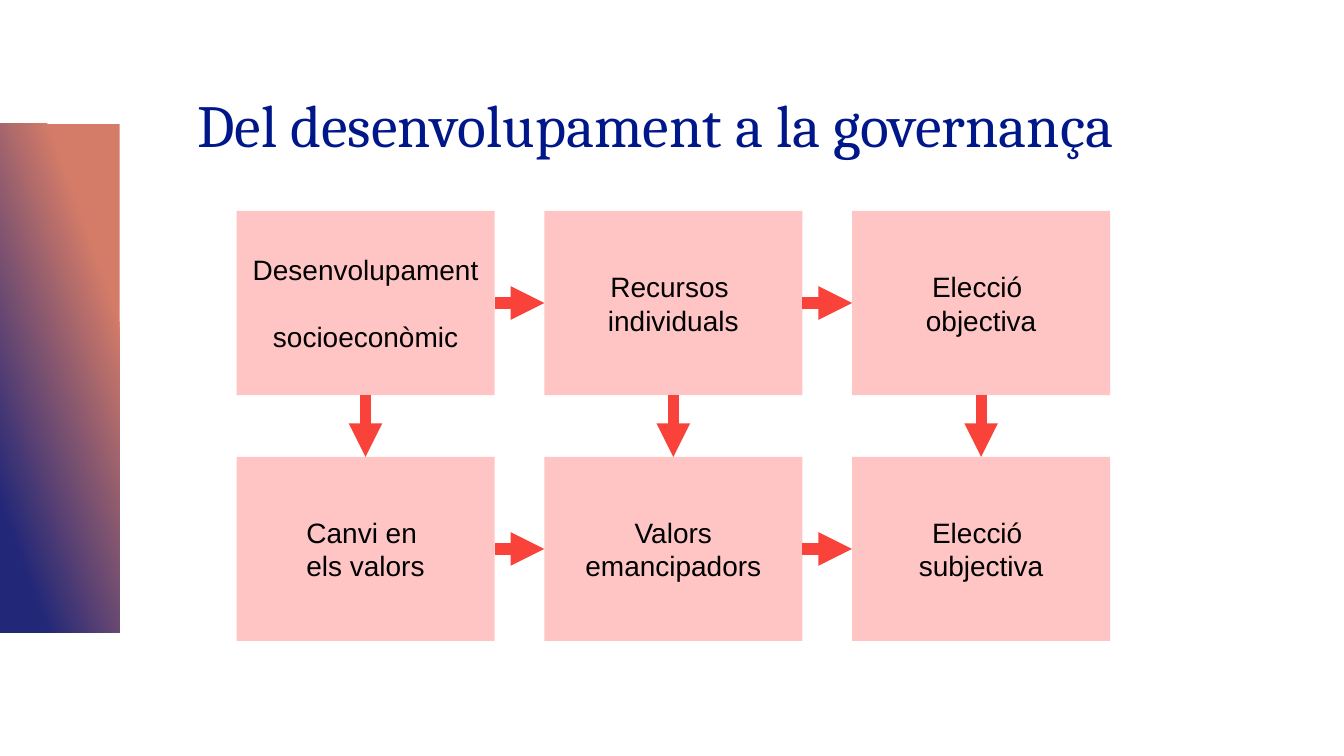
import copy

import pptx
import pptx.dml.color
import pptx.enum.shapes
import pptx.enum.text
import pptx.oxml
import pptx.oxml.ns
import pptx.util
from pptx.util import Inches

RGBColor = pptx.dml.color.RGBColor
Anchor = pptx.enum.text.MSO_ANCHOR
Align = pptx.enum.text.PP_ALIGN

NAVY = RGBColor(0x00, 0x17, 0x89)
PINK = RGBColor(0xFF, 0xC5, 0xC5)
RED = RGBColor(0xF9, 0x42, 0x3A)
BLACK = RGBColor(0x00, 0x00, 0x00)
TERRACOTTA = RGBColor(0xD4, 0x7C, 0x68)
INDIGO = RGBColor(0x22, 0x27, 0x78)

BOX_WIDTH, BOX_HEIGHT = 1.92, 1.37
COLUMNS = [1.76 + 2.29 * i for i in range(3)]
ROWS = [1.57, 3.4]
# A tuple holds paragraphs; a line feed inside one is a line break.
STAGES = [
    [("Desenvolupament \nsocioeconòmic",), ("Recursos ", "individuals"), ("Elecció ", "objectiva")],
    [("Canvi en ", "els valors"), ("Valors", "emancipadors"), ("Elecció ", "subjectiva")],
]


def write_text(frame, paragraphs, *, font, size, color, align=Align.LEFT,
               anchor=Anchor.MIDDLE, line_spacing=None):
    frame.word_wrap = True
    frame.vertical_anchor = anchor
    for i, text in enumerate(paragraphs):
        paragraph = frame.paragraphs[0] if i == 0 else frame.add_paragraph()
        paragraph.text = text
        paragraph.alignment = align
        paragraph.line_spacing = line_spacing
        for run in paragraph.runs:
            run.font.name = font
            run.font.size = pptx.util.Pt(size)
            run.font.color.rgb = color
        # A line break takes the height of the text around it.
        for line_break in paragraph._p.findall(pptx.oxml.ns.qn("a:br")):
            line_break.insert(0, copy.deepcopy(paragraph.runs[0]._r.rPr))


class FlowSlide:
    def __init__(self, slide):
        self.shapes = slide.shapes
        self.box_style = dict(font="Arial", size=15, color=BLACK, align=Align.CENTER)
        self.title_style = dict(font="Cambria", size=32, color=NAVY,
                                anchor=Anchor.BOTTOM, line_spacing=0.9)

    def rectangle(self, left, top, width, height):
        shape = self.shapes.add_shape(
            pptx.enum.shapes.MSO_SHAPE.RECTANGLE,
            Inches(left), Inches(top), Inches(width), Inches(height))
        shape.shadow.inherit = False
        shape.line.fill.background()
        return shape

    def side_band(self, left, top, width, height):
        fill = self.rectangle(left, top, width, height).fill
        fill.gradient()
        fill.gradient_angle = 200
        for stop, color, position in zip(fill.gradient_stops, (TERRACOTTA, INDIGO), (0.23, 0.85)):
            stop.color.rgb = color
            stop.position = position

    def title(self, text, left, top, width, height):
        heading = self.shapes.add_textbox(
            Inches(left), Inches(top), Inches(width), Inches(height))
        write_text(heading.text_frame, [text], **self.title_style)

    def box(self, paragraphs, left, top):
        stage = self.rectangle(left, top, BOX_WIDTH, BOX_HEIGHT)
        stage.fill.solid()
        stage.fill.fore_color.rgb = PINK
        write_text(stage.text_frame, paragraphs, **self.box_style)

    def arrow(self, tip, tail):
        """Draw a line whose arrowhead is at its starting point."""
        connector = self.shapes.add_connector(
            pptx.enum.shapes.MSO_CONNECTOR.STRAIGHT,
            *(Inches(value) for value in (*tip, *tail)))
        connector.line.color.rgb = RED
        connector.line.width = pptx.util.Pt(6)
        head = pptx.oxml.parse_xml(
            f'<a:headEnd {pptx.oxml.ns.nsdecls("a")} type="triangle"/>')
        connector.line._get_or_add_ln().append(head)
        connector._element.spPr.append(
            pptx.oxml.parse_xml(f'<a:effectLst {pptx.oxml.ns.nsdecls("a")}/>'))


def main():
    deck = pptx.Presentation()
    deck.slide_width = Inches(10)
    deck.slide_height = deck.slide_width * 9 // 16
    page = FlowSlide(deck.slides.add_slide(deck.slide_layouts[6]))

    page.side_band(0, 0.92, 0.89, 3.79)
    page.title("Del desenvolupament a la governança", 1.37, 0.28, 8.32, 0.96)

    for top, stages in zip(ROWS, STAGES):
        for left, paragraphs in zip(COLUMNS, stages):
            page.box(paragraphs, left, top)

    for top in ROWS:
        middle = top + BOX_HEIGHT / 2
        for left, following in zip(COLUMNS, COLUMNS[1:]):
            page.arrow((following, middle), (left + BOX_WIDTH, middle))
    for left in COLUMNS:
        center = left + BOX_WIDTH / 2
        page.arrow((center, ROWS[1]), (center, ROWS[0] + BOX_HEIGHT))

    deck.save("out.pptx")


if __name__ == "__main__":
    main()
